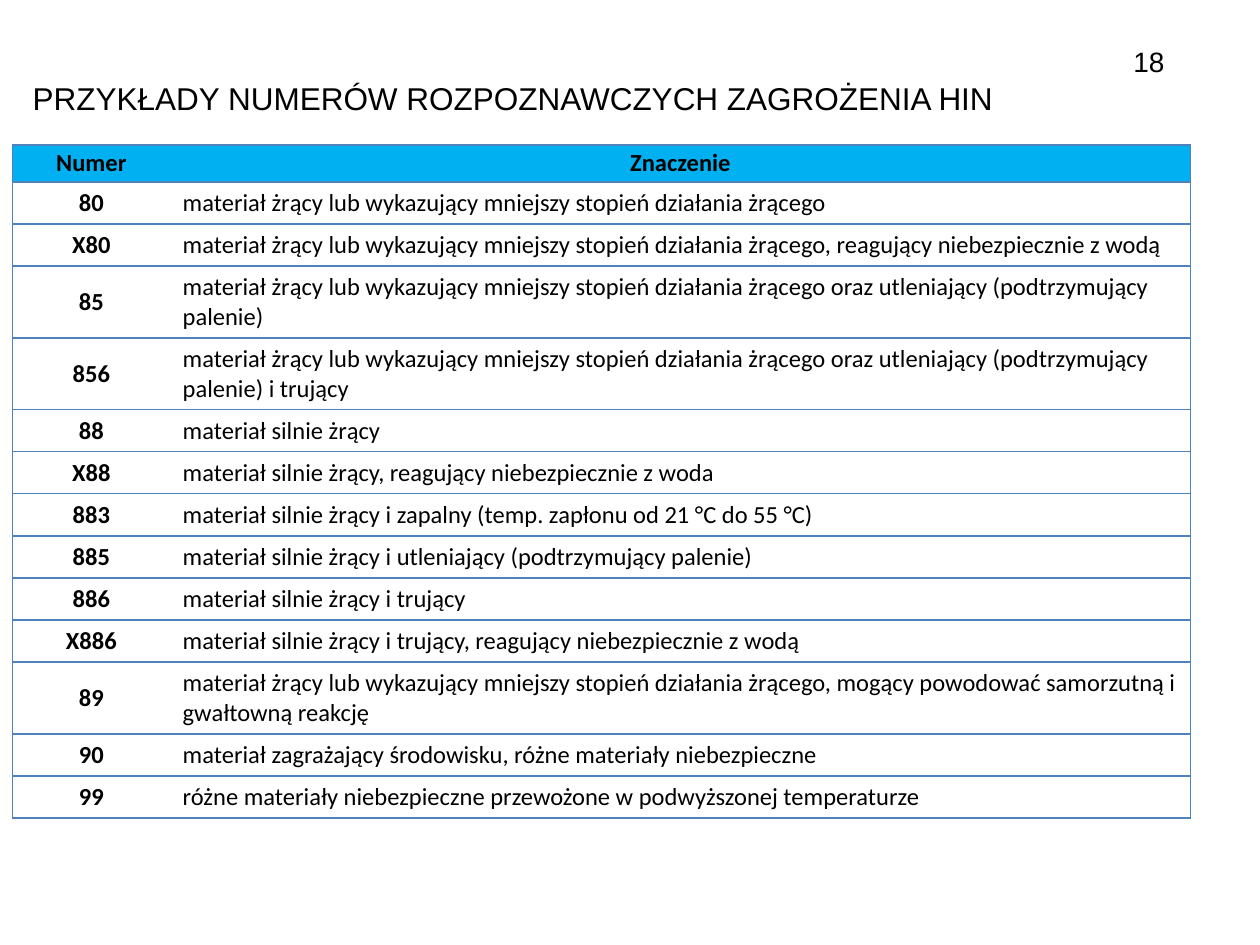
from dataclasses import dataclass

from lxml import etree
from pptx import Presentation
from pptx import util as u
from pptx.dml.color import RGBColor
from pptx.enum import text
from pptx.oxml.ns import qn


@dataclass(frozen=True)
class Theme:
    ink: str = "000000"
    header_fill: str = "00B0F0"
    body_fill: str = "FFFFFF"
    border: str = "4F81BD"
    border_width: float = 1
    heading_font: str = "Arial"
    table_font: str = "Calibri"
    title_size: int = 18
    number_size: int = 16
    table_size: int = 14


HEADER = ("Numer", "Znaczenie")
HAZARDS = [
    ("80", "materiał żrący lub wykazujący mniejszy stopień działania żrącego"),
    ("X80", "materiał żrący lub wykazujący mniejszy stopień działania żrącego, "
            "reagujący niebezpiecznie z wodą"),
    ("85", "materiał żrący lub wykazujący mniejszy stopień działania żrącego "
           "oraz utleniający (podtrzymujący palenie)"),
    ("856", "materiał żrący lub wykazujący mniejszy stopień działania żrącego "
            "oraz utleniający (podtrzymujący palenie) i trujący"),
    ("88", "materiał silnie żrący"),
    ("X88", "materiał silnie żrący, reagujący niebezpiecznie z woda"),
    ("883", "materiał silnie żrący i zapalny (temp. zapłonu od 21 °C do 55 °C)"),
    ("885", "materiał silnie żrący i utleniający (podtrzymujący palenie)"),
    ("886", "materiał silnie żrący i trujący"),
    ("X886", "materiał silnie żrący i trujący, reagujący niebezpiecznie z wodą"),
    ("89", "materiał żrący lub wykazujący mniejszy stopień działania żrącego, "
           "mogący powodować samorzutną i gwałtowną reakcję"),
    ("90", "materiał zagrażający środowisku, różne materiały niebezpieczne"),
    ("99", "różne materiały niebezpieczne przewożone w podwyższonej temperaturze"),
]
COLUMN_WIDTHS = (1.25, 8.1)
HEADER_HEIGHT, LINE_HEIGHT, TWO_LINE_HEIGHT = 0.29, 0.33, 0.57
CHARACTERS_PER_LINE = 98


class SlideBuilder:
    def __init__(self, slide, theme):
        self.slide = slide
        self.theme = theme

    def set_text(self, frame, words, font, size, align, bold=False):
        frame.word_wrap = True
        paragraph = frame.paragraphs[0]
        paragraph.text = words
        paragraph.alignment = align
        paragraph.font.name = font
        paragraph.font.size = u.Pt(size)
        paragraph.font.bold = bold
        paragraph.font.color.rgb = RGBColor.from_string(self.theme.ink)

    def title(self, words, left, top, width, height):
        shape = self.slide.shapes.title
        shape.left, shape.top = u.Inches(left), u.Inches(top)
        shape.width, shape.height = u.Inches(width), u.Inches(height)
        shape.text_frame.vertical_anchor = text.MSO_ANCHOR.TOP
        self.set_text(shape.text_frame, words, self.theme.heading_font,
                      self.theme.title_size, text.PP_ALIGN.LEFT)

    def page_number(self, words, left, top, width, height):
        shape = self.slide.shapes.add_textbox(
            u.Inches(left), u.Inches(top), u.Inches(width), u.Inches(height))
        shape.text_frame.vertical_anchor = text.MSO_ANCHOR.MIDDLE
        self.set_text(shape.text_frame, words, self.theme.heading_font,
                      self.theme.number_size, text.PP_ALIGN.RIGHT)

    def borders(self, cell, hidden_side):
        """Line every side but the one the two columns share."""
        properties = cell._tc.get_or_add_tcPr()
        for side in ("lnL", "lnR", "lnT", "lnB"):
            line = etree.SubElement(properties, qn(f"a:{side}"),
                                    w=str(u.Pt(self.theme.border_width)))
            if side == hidden_side:
                etree.SubElement(line, qn("a:noFill"))
            else:
                fill = etree.SubElement(line, qn("a:solidFill"))
                etree.SubElement(fill, qn("a:srgbClr"), val=self.theme.border)

    def cell(self, cell, words, is_header, is_number):
        self.borders(cell, "lnR" if is_number else "lnL")
        cell.fill.solid()
        cell.fill.fore_color.rgb = RGBColor.from_string(
            self.theme.header_fill if is_header else self.theme.body_fill)
        cell.vertical_anchor = text.MSO_ANCHOR.MIDDLE
        if is_header:
            cell.margin_left = cell.margin_right = u.Inches(0.06)
            cell.margin_top = cell.margin_bottom = u.Inches(0.03)
        emphasised = is_header or is_number
        align = text.PP_ALIGN.CENTER if emphasised else text.PP_ALIGN.LEFT
        self.set_text(cell.text_frame, words, self.theme.table_font,
                      self.theme.table_size, align, emphasised)

    def hazard_table(self, left, top):
        heights = [HEADER_HEIGHT] + [
            TWO_LINE_HEIGHT if len(meaning) > CHARACTERS_PER_LINE else LINE_HEIGHT
            for _, meaning in HAZARDS]
        rows = [HEADER, *HAZARDS]
        table = self.slide.shapes.add_table(
            len(rows), len(HEADER), u.Inches(left), u.Inches(top),
            u.Inches(sum(COLUMN_WIDTHS)), u.Inches(sum(heights))).table
        table.horz_banding = False
        for column, width in zip(table.columns, COLUMN_WIDTHS):
            column.width = u.Inches(width)
        for row_index, (row, height) in enumerate(zip(rows, heights)):
            table.rows[row_index].height = u.Inches(height)
            for column_index, words in enumerate(row):
                self.cell(table.cell(row_index, column_index), words,
                          row_index == 0, column_index == 0)


def main():
    presentation = Presentation()
    presentation.slide_width = u.Inches(10)
    presentation.slide_height = u.Inches(7.5)
    title_only = presentation.slide_layouts[5]
    builder = SlideBuilder(presentation.slides.add_slide(title_only), Theme())
    builder.title("PRZYKŁADY NUMERÓW ROZPOZNAWCZYCH ZAGROŻENIA HIN",
                  0.16, 0.58, 8.12, 0.73)
    builder.page_number("18", 7, 0.23, 2.34, 0.52)
    builder.hazard_table(0.1, 1.15)
    presentation.save("out.pptx")


if __name__ == "__main__":
    main()
